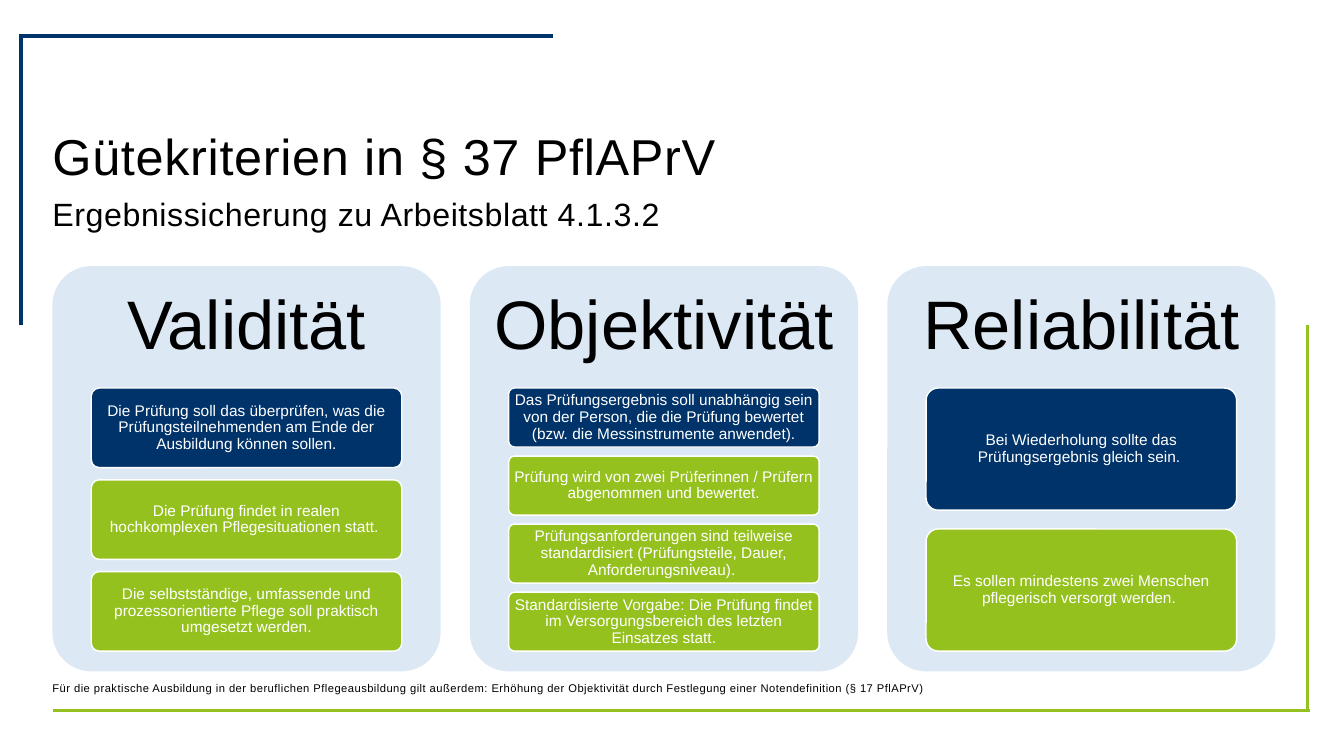
from pptx import Presentation
from pptx.dml.color import RGBColor
from pptx.enum.shapes import MSO_SHAPE as Shape
from pptx.enum.text import MSO_ANCHOR as Anchor, MSO_AUTO_SIZE as AutoSize, PP_ALIGN as Align
from pptx.oxml import parse_xml
from pptx.oxml.ns import nsdecls, qn
from pptx.util import Inches, Pt

NAVY, GREEN, PALE, BLACK, WHITE = "003369", "95C11F", "DCE9F5", "000000", "FFFFFF"


def color(value):
    return RGBColor.from_string(value)


def write(holder, text, size, ink, align, anchor, insets=(0, 0), line_spacing=0.9, tracking=0):
    frame = holder.text_frame
    frame.text = text
    side, top = map(Inches, insets)
    paragraph = frame.paragraphs[0]
    run = paragraph.runs[0]
    formats = [
        (frame, {"word_wrap": True, "auto_size": AutoSize.NONE, "vertical_anchor": anchor,
                 "margin_left": side, "margin_right": side,
                 "margin_top": top, "margin_bottom": top}),
        (paragraph, {"alignment": align, "line_spacing": line_spacing,
                     "space_before": Pt(0), "space_after": Pt(0)}),
        (run.font, {"name": "Arial", "size": Pt(size), "bold": False}),
    ]
    for target, values in formats:
        for key, value in values.items():
            setattr(target, key, value)
    run.font.color.rgb = color(ink)
    if tracking:
        run.font._element.set("spc", str(tracking))


prs = Presentation()
prs.slide_width, prs.slide_height = Inches(13.33), Inches(7.5)
slide = prs.slides.add_slide(prs.slide_layouts[4])
title, subtitle, left_content, footnote, right_content = slide.placeholders
for unused in (left_content, right_content):
    unused.element.getparent().remove(unused.element)

corner_frame = slide.shapes.add_table(2, 3, *map(Inches, (0.21, 0.36, 12.76, 6.69)))
corners = corner_frame.table
corners.first_row = corners.horz_banding = False
corners._tbl.tblPr.find(qn("a:tableStyleId")).text = "{2D5ABB26-0587-4C30-8999-92F81FD0307C}"
for column, width in zip(corners.columns, (0.32, 4.96, 7.48)):
    column.width = Inches(width)
for row, height in zip(corners.rows, (2.86, 3.83)):
    row.height = Inches(height)
for cell in corners.iter_cells():
    cell.fill.background()

corner_spans = [
    (corners.cell(0, 0), corners.cell(0, 1), NAVY, ("lnL", "lnT")),
    (corners.cell(1, 1), corners.cell(1, 2), GREEN, ("lnR", "lnB")),
]
for first, last, ink, sides in corner_spans:
    first.merge(last)
    for position, side in enumerate(sides):
        first._tc.tcPr.insert(position, parse_xml(
            f'<a:{side} {nsdecls("a")} w="{Pt(3)}"><a:solidFill><a:srgbClr val="{ink}"/>'
            f'</a:solidFill></a:{side}>'))

headings = [
    (title, "Gütekriterien in § 37 PflAPrV", 1.31, 0.65, 36, 0.9, 50),
    (subtitle, "Ergebnissicherung zu Arbeitsblatt 4.1.3.2", 1.93, 0.54, 23, 1.0, 40),
    (footnote, "Für die praktische Ausbildung in der beruflichen Pflegeausbildung gilt außerdem: "
     "Erhöhung der Objektivität durch Festlegung einer Notendefinition (§ 17 PflAPrV)",
     6.74, 0.31, 8, 1.14, 30),
]
for holder, text, top, height, size, line_spacing, tracking in headings:
    holder.left, holder.top = Inches(0.52), Inches(top)
    holder.width, holder.height = Inches(12.13), Inches(height)
    write(holder, text, size, BLACK, Align.LEFT, Anchor.TOP,
          line_spacing=line_spacing, tracking=tracking)

criteria = {
    "Validität": [
        "Die Prüfung soll das überprüfen, was die Prüfungsteilnehmenden am Ende der "
        "Ausbildung können sollen.",
        "Die Prüfung findet in realen hochkomplexen Pflegesituationen statt. ",
        "Die selbstständige, umfassende und prozessorientierte Pflege soll praktisch "
        "umgesetzt werden.",
    ],
    "Objektivität": [
        "Das Prüfungsergebnis soll unabhängig sein von der Person, die die Prüfung bewertet "
        "(bzw. die Messinstrumente anwendet).",
        "Prüfung wird von zwei Prüferinnen / Prüfern abgenommen und bewertet.",
        "Prüfungsanforderungen sind teilweise standardisiert (Prüfungsteile, Dauer, "
        "Anforderungsniveau). ",
        "Standardisierte Vorgabe: Die Prüfung findet im Versorgungsbereich des letzten "
        "Einsatzes statt.",
    ],
    "Reliabilität": [
        "Bei Wiederholung sollte das Prüfungsergebnis gleich sein. ",
        "Es sollen mindestens zwei Menschen pflegerisch versorgt werden. ",
    ],
}
PANEL_LEFT, PANEL_PITCH, PANEL_WIDTH = 0.52, 4.14, 3.85
CARD_TOP, CARD_WIDTH, STACK_HEIGHT, GAP_RATIO = 3.85, 3.08, 2.61, 2 / 13

for column, (criterion, statements) in enumerate(criteria.items()):
    panel_left = PANEL_LEFT + column * PANEL_PITCH
    panel = slide.shapes.add_shape(Shape.ROUNDED_RECTANGLE, Inches(panel_left), Inches(2.64),
                                   Inches(PANEL_WIDTH), Inches(4.02))
    panel.shadow.inherit = False
    panel.adjustments[0] = 0.1
    panel.fill.solid()
    panel.fill.fore_color.rgb = color(PALE)
    panel.line.fill.background()
    write(panel, criterion, 49, BLACK, Align.CENTER, Anchor.TOP, insets=(0, 0.13))

    count = len(statements)
    card_height = STACK_HEIGHT / (count + (count - 1) * GAP_RATIO)
    card_left = panel_left + (PANEL_WIDTH - CARD_WIDTH) / 2
    for row, statement in enumerate(statements):
        card_top = CARD_TOP + row * card_height * (1 + GAP_RATIO)
        card = slide.shapes.add_shape(Shape.ROUNDED_RECTANGLE, Inches(card_left), Inches(card_top),
                                      Inches(CARD_WIDTH), Inches(card_height))
        card.shadow.inherit = False
        card.adjustments[0] = 0.1
        card.fill.solid()
        card.fill.fore_color.rgb = color(GREEN if row else NAVY)
        card.line.color.rgb = color(WHITE)
        card.line.width = Pt(1)
        write(card, statement, 11, WHITE, Align.CENTER, Anchor.MIDDLE, insets=(0.03, 0.02))

prs.save("out.pptx")
